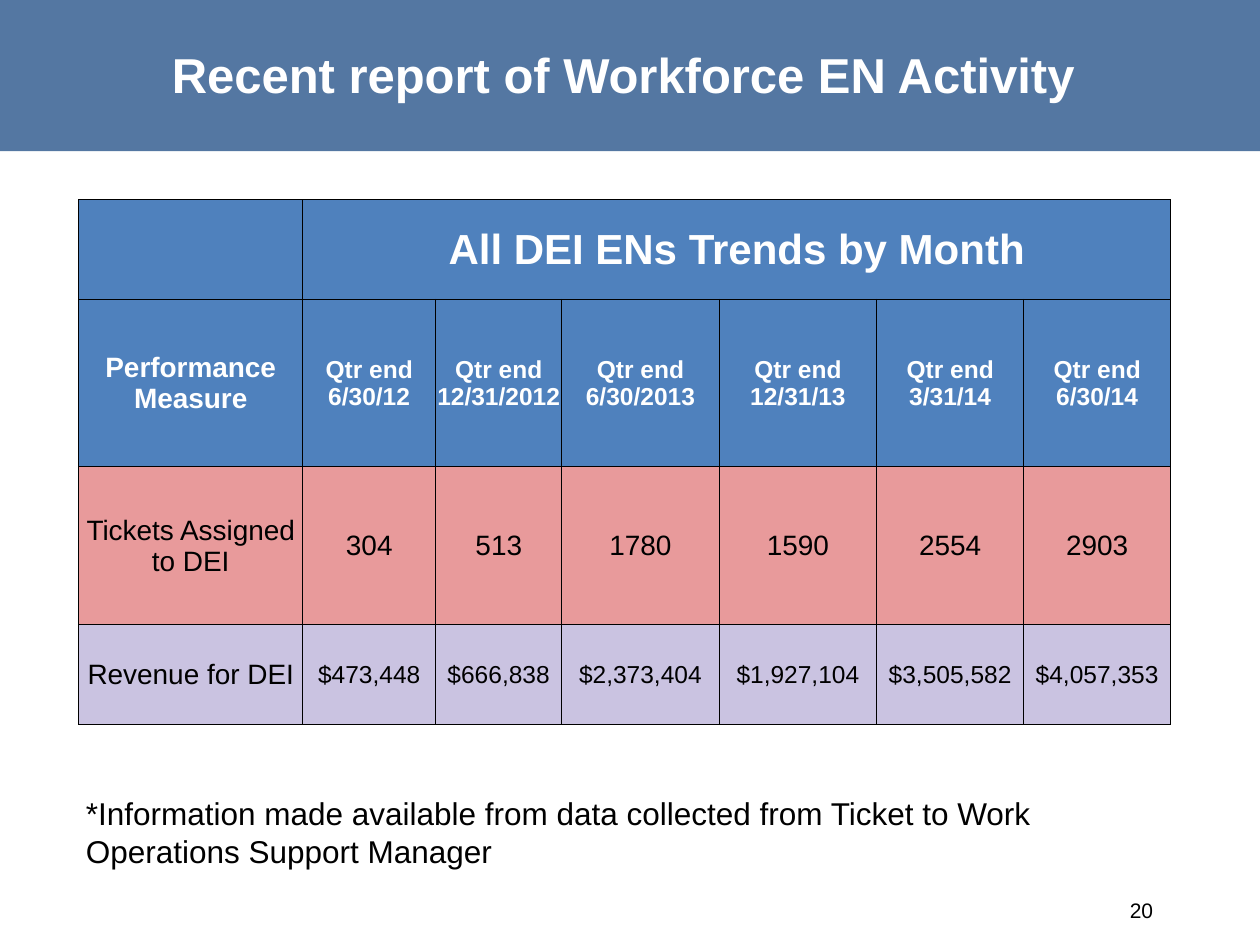
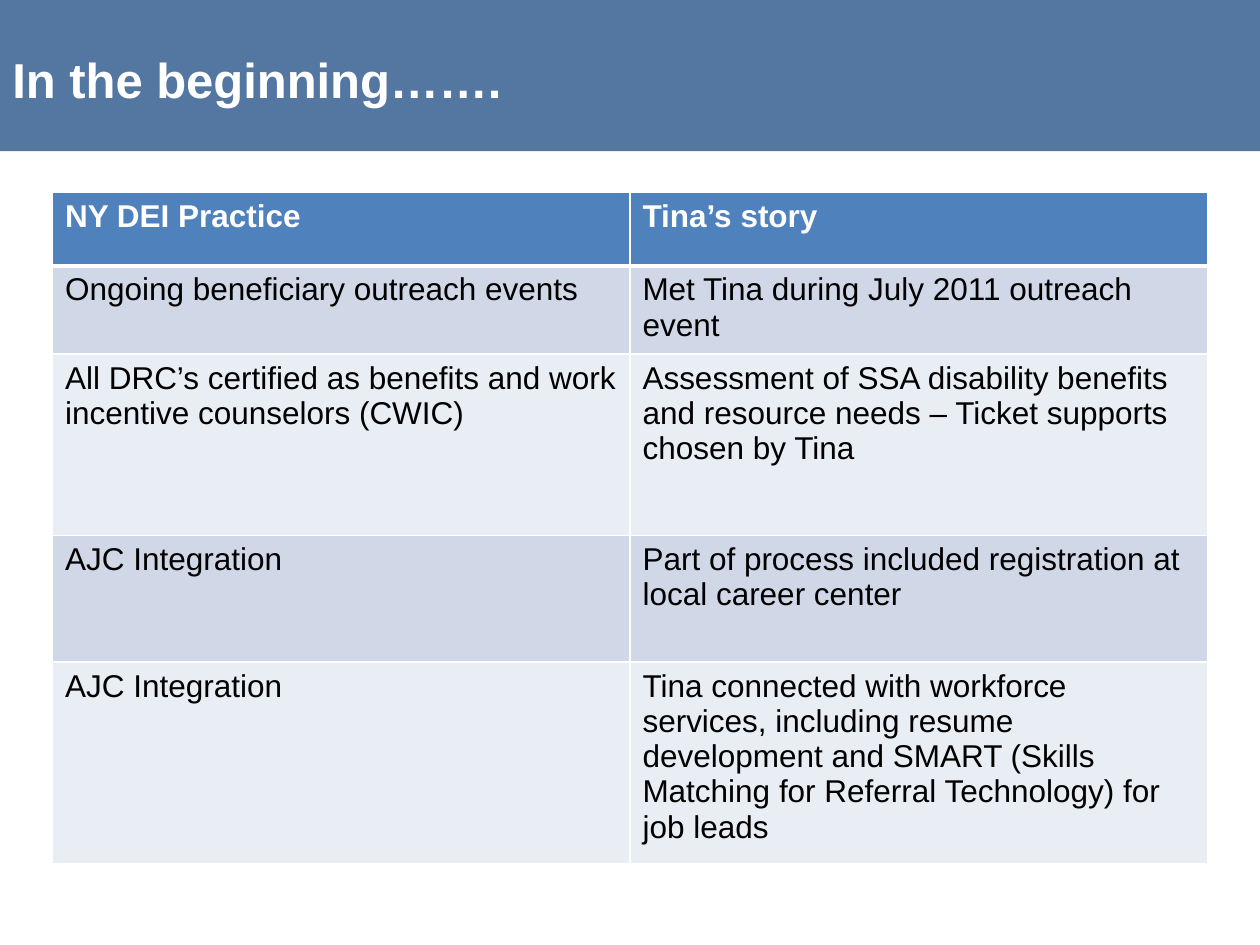
"""Build two slides on workforce activity: a trend table and a case story."""
from lxml import etree
from pptx import Presentation
from pptx.dml.color import RGBColor
from pptx.enum.shapes import MSO_SHAPE
from pptx.enum.text import MSO_ANCHOR, PP_ALIGN
from pptx.oxml.ns import qn
from pptx.util import Pt

LEFT, MID, RIGHT = PP_ALIGN.LEFT, PP_ALIGN.CENTER, PP_ALIGN.RIGHT
TOP, CENTRE = MSO_ANCHOR.TOP, MSO_ANCHOR.MIDDLE
RECT = MSO_SHAPE.RECTANGLE
FONT = "Arial"
HEX = {
    "band": "376092", "head": "4F81BD", "white": "FFFFFF", "black": "000000",
    "rose": "E89A9B", "lilac": "CAC3E1", "dark": "D0D8E8", "light": "E9EDF4",
}

TREND = "Recent report of Workforce EN Activity "
STORY = "In the beginning……."
NOTE = ("*Information made available from data collected from Ticket to Work "
        "Operations Support Manager")
PAGE = "20"

TREND_ROWS = [
    ["", "All DEI ENs Trends by Month", "", "", "", "", ""],
    ["Performance Measure", "Qtr end 6/30/12", "Qtr end 12/31/2012", "Qtr end 6/30/2013",
     "Qtr end 12/31/13", "Qtr end 3/31/14", "Qtr end 6/30/14"],
    ["Tickets Assigned to DEI", "304", "513", "1780", "1590", "2554", "2903"],
    ["Revenue for DEI", "$473,448", "$666,838", "$2,373,404", "$1,927,104",
     "$3,505,582", "$4,057,353"],
]
TREND_FILLS = ["head", "head", "rose", "lilac"]
TREND_SIZES = [24, 14, 16, 14]
TREND_COLS = [128, 76, 72, 90, 90, 84, 84]
TREND_TALL = [57, 95.5, 90.5, 57]

STORY_ROWS = [
    ["NY DEI Practice", "Tina’s story"],
    ["Ongoing beneficiary outreach events", "Met Tina during July 2011 outreach event"],
    ["All DRC’s certified as benefits and work incentive counselors (CWIC)",
     "Assessment of SSA disability benefits and resource needs – "
     "Ticket supports chosen by Tina"],
    ["AJC Integration", "Part of process included registration at local career center"],
    ["AJC Integration",
     "Tina connected with workforce services, including resume development and SMART "
     "(Skills Matching for Referral Technology) for job leads"],
]
STORY_FILLS = ["head", "dark", "light", "dark", "light"]
STORY_COLS = [330, 330]
STORY_TALL = [42, 42, 103.5, 72.5, 103.5]


def tint(name):
    return RGBColor.from_string(HEX[name])


def write(frame, text, size, color, bold=False, align=LEFT):
    para = frame.paragraphs[0]
    para.alignment = align
    run = para.add_run()
    run.text = text
    font = run.font
    font.name, font.size, font.bold = FONT, Pt(size), bold
    font.color.rgb = tint(color)


def add_text(slide, box, text, size, color, bold=False, align=LEFT, anchor=CENTRE):
    frame = slide.shapes.add_textbox(*map(Pt, box)).text_frame
    frame.word_wrap = True
    frame.vertical_anchor = anchor
    write(frame, text, size, color, bold, align)


def add_slide(deck, title, box, align):
    slide = deck.slides.add_slide(deck.slide_layouts[6])
    band = slide.shapes.add_shape(RECT, Pt(-0.5), 0, Pt(720.5), Pt(86.4))
    band.shadow.inherit = False
    band.fill.solid()
    band.fill.fore_color.rgb = tint("band")
    band.line.fill.background()
    color = band.fill._xPr.find(qn("a:solidFill"))[0]
    etree.SubElement(color, qn("a:alpha"), val="85000")
    add_text(slide, box, title, 28, "white", True, align)
    return slide


def add_edge(cell, side, color, width):
    edge = etree.SubElement(cell._tc.get_or_add_tcPr(), qn("a:ln" + side), w=str(Pt(width)))
    fill = etree.SubElement(edge, qn("a:solidFill"))
    etree.SubElement(fill, qn("a:srgbClr"), val=HEX[color])


def add_grid(slide, left, top, cols, tall, fills, edge, widths):
    """Add a table; widths holds the rule above each row and below the last."""
    frame = slide.shapes.add_table(len(tall), len(cols), Pt(left), Pt(top),
                                   Pt(sum(cols)), Pt(sum(tall)))
    grid = frame.table
    grid.first_row = grid.horz_banding = False
    for col, wide in zip(grid.columns, cols):
        col.width = Pt(wide)
    for i, (row, high) in enumerate(zip(grid.rows, tall)):
        row.height = Pt(high)
        sides = {"L": widths[0], "R": widths[0], "T": widths[i], "B": widths[i + 1]}
        for cell in row.cells:
            for side, width in sides.items():
                add_edge(cell, side, edge, width)
            cell.fill.solid()
            cell.fill.fore_color.rgb = tint(fills[i])
    return grid


def fill_cell(cell, text, size, head, align, anchor):
    cell.vertical_anchor = anchor
    if text:
        write(cell.text_frame, text, size, "white" if head else "black", head, align)


def add_trend(deck):
    slide = add_slide(deck, TREND, (0, 0, 720, 84), MID)
    add_text(slide, (498, 505.5, 168, 29), PAGE, 12, "black", align=RIGHT)
    add_text(slide, (42, 450, 618, 51), NOTE, 18, "black", anchor=TOP)
    grid = add_grid(slide, 45, 114, TREND_COLS, TREND_TALL, TREND_FILLS, "black", [0.5] * 5)
    grid.cell(0, 1).merge(grid.cell(0, 6))
    for i, row in enumerate(TREND_ROWS):
        for j, text in enumerate(row):
            cell = grid.cell(i, j)
            cell.margin_left = cell.margin_right = cell.margin_top = Pt(0.7)
            cell.margin_bottom = 0
            size = TREND_SIZES[i] if j else 16
            fill_cell(cell, text, size, i < 2, MID, CENTRE)


def add_story(deck):
    slide = add_slide(deck, STORY, (0, 0, 396, 90), LEFT)
    grid = add_grid(slide, 30, 110, STORY_COLS, STORY_TALL, STORY_FILLS, "white",
                    [1, 3, 1, 1, 1, 1])
    for i, row in enumerate(STORY_ROWS):
        for j, text in enumerate(row):
            fill_cell(grid.cell(i, j), text, 18, i == 0, LEFT, TOP)


def main():
    deck = Presentation()
    deck.slide_width, deck.slide_height = Pt(720), Pt(540)
    add_trend(deck)
    add_story(deck)
    deck.save("out.pptx")


if __name__ == "__main__":
    main()
